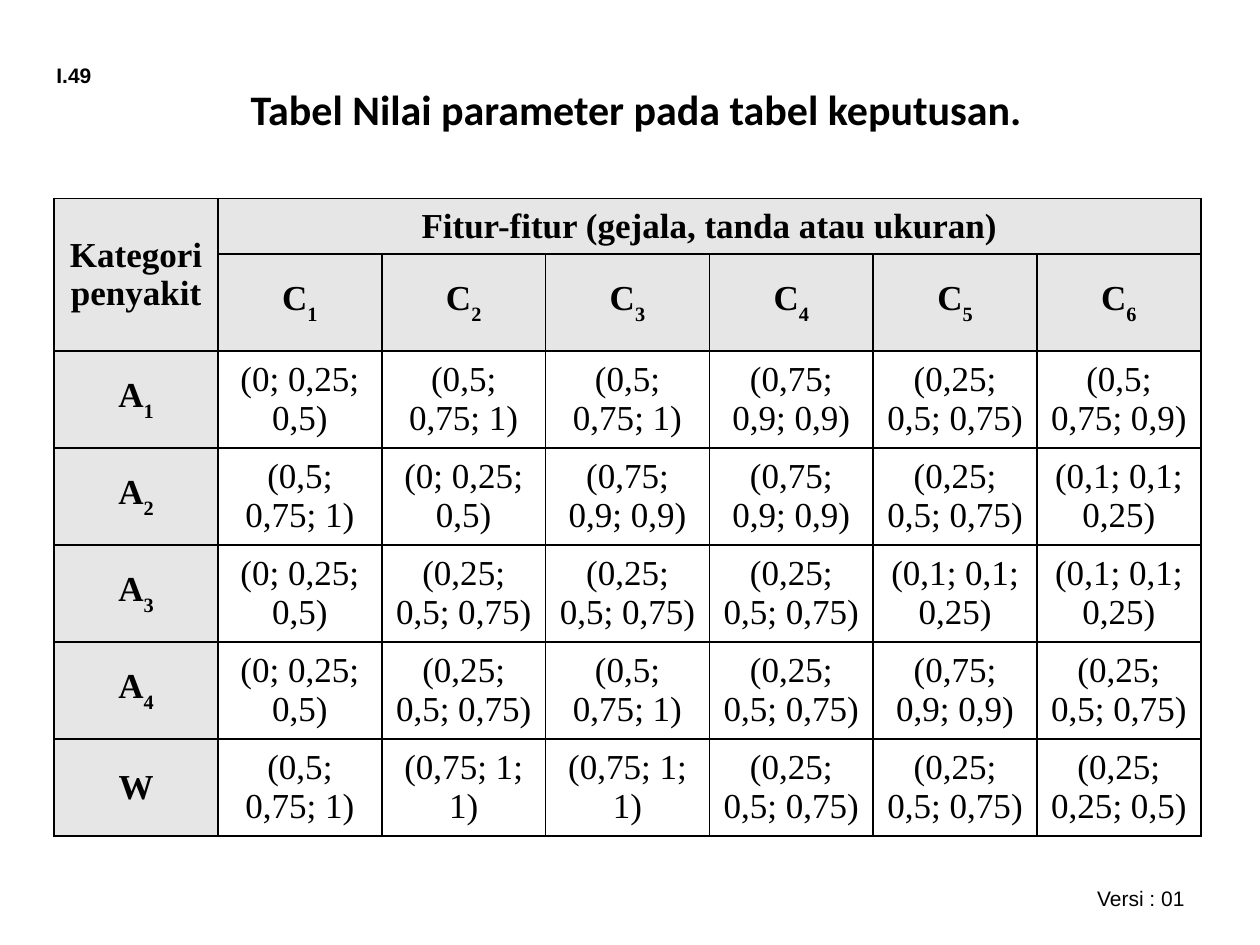
from dataclasses import dataclass

from lxml import etree
from pptx import Presentation, util as u
from pptx.dml.color import RGBColor
from pptx.enum import text
from pptx.oxml.ns import qn

WIDTH, HEIGHT = 10, 7.5
INK, SHADE = "000000", "E6E6E6"
COLUMN, HEADER_ROW, BODY_ROW = 1.3, 0.44, 0.77
SERIF = "Times New Roman"


@dataclass(frozen=True)
class Area:
    left: float
    top: float
    width: float
    height: float

    def lengths(self) -> tuple:
        return (u.Inches(self.left * WIDTH), u.Inches(self.top * HEIGHT),
                u.Inches(self.width * WIDTH), u.Inches(self.height * HEIGHT))


@dataclass(frozen=True)
class Category:
    letter: str
    index: str
    values: tuple[str, ...]


LOW, HIGH, SURE = "(0; 0,25; 0,5)", "(0,5; 0,75; 1)", "(0,75; 0,9; 0,9)"
MIDDLE, RARE = "(0,25; 0,5; 0,75)", "(0,1; 0,1; 0,25)"
CERTAIN = "(0,75; 1; 1)"
CATEGORIES = [
    Category("A", "1", (LOW, HIGH, HIGH, SURE, MIDDLE, "(0,5; 0,75; 0,9)")),
    Category("A", "2", (HIGH, LOW, SURE, SURE, MIDDLE, RARE)),
    Category("A", "3", (LOW, MIDDLE, MIDDLE, MIDDLE, RARE, RARE)),
    Category("A", "4", (LOW, MIDDLE, HIGH, MIDDLE, SURE, MIDDLE)),
    Category("W", "", (HIGH, CERTAIN, CERTAIN, MIDDLE, MIDDLE, "(0,25; 0,25; 0,5)")),
]
FEATURES = len(CATEGORIES[0].values)


def colour(value: str) -> RGBColor:
    return RGBColor.from_string(value)


def write(frame, wording: str, *, subscript: str = "", size: float = 20,
          font: str = SERIF, bold: bool = False,
          align=text.PP_ALIGN.CENTER) -> None:
    frame.word_wrap = True
    paragraph = frame.paragraphs[0]
    paragraph.alignment = align
    for part, baseline in ((wording, None), (subscript, "-30000")):
        if not part:
            continue
        run = paragraph.add_run()
        run.text = part
        run.font.size = u.Pt(size)
        run.font.name = font
        run.font.bold = bold
        run.font.color.rgb = colour(INK)
        if baseline:
            run.font._element.set("baseline", baseline)


def add_borders(cell) -> None:
    properties = cell._tc.get_or_add_tcPr()
    for position, side in enumerate(("lnL", "lnR", "lnT", "lnB")):
        line = etree.Element(qn(f"a:{side}"), w=str(u.Pt(1)))
        fill = etree.SubElement(line, qn("a:solidFill"))
        etree.SubElement(fill, qn("a:srgbClr"), val=INK)
        properties.insert(position, line)


def fill_cell(cell, wording: str, subscript: str = "", heading: bool = False) -> None:
    cell.vertical_anchor = text.MSO_ANCHOR.MIDDLE
    write(cell.text_frame, wording, subscript=subscript, bold=heading)


def add_label(slide, area: Area, wording: str, **style) -> None:
    write(slide.shapes.add_textbox(*area.lengths()).text_frame, wording,
          size=12, font="Arial", **style)


def add_title(slide, area: Area, wording: str) -> None:
    title = slide.shapes.title
    title.left, title.top, title.width, title.height = area.lengths()
    title.text_frame.vertical_anchor = text.MSO_ANCHOR.MIDDLE
    write(title.text_frame, wording, size=24, font="Calibri", bold=True)


def add_decision_table(slide, left: float, top: float) -> None:
    body_rows = len(CATEGORIES) + 1
    area = Area(left, top, COLUMN * (FEATURES + 1) / WIDTH,
                (HEADER_ROW + BODY_ROW * body_rows) / HEIGHT)
    table = slide.shapes.add_table(body_rows + 1, FEATURES + 1, *area.lengths()).table
    for column in table.columns:
        column.width = u.Inches(COLUMN)
    for number, row in enumerate(table.rows):
        row.height = u.Inches(BODY_ROW if number else HEADER_ROW)
        for position, cell in enumerate(row.cells):
            if number < 2 or position == 0:
                cell.fill.solid()
                cell.fill.fore_color.rgb = colour(SHADE)
            else:
                cell.fill.background()
            add_borders(cell)

    table.cell(0, 0).merge(table.cell(1, 0))
    table.cell(0, 1).merge(table.cell(0, FEATURES))
    fill_cell(table.cell(0, 0), "Kategori penyakit", heading=True)
    fill_cell(table.cell(0, 1), "Fitur-fitur (gejala, tanda atau ukuran)", heading=True)
    for feature in range(1, FEATURES + 1):
        fill_cell(table.cell(1, feature), "C", str(feature), heading=True)
    for number, category in enumerate(CATEGORIES, start=2):
        fill_cell(table.cell(number, 0), category.letter, category.index, heading=True)
        for feature, value in enumerate(category.values, start=1):
            fill_cell(table.cell(number, feature), value)


def main() -> None:
    deck = Presentation()
    deck.slide_width, deck.slide_height = u.Inches(WIDTH), u.Inches(HEIGHT)
    slide = deck.slides.add_slide(deck.slide_layouts.get_by_name("Title Only"))
    add_label(slide, Area(0.72, 0.93, 0.23, 0.04), "Versi : 01",
              align=text.PP_ALIGN.RIGHT)
    add_label(slide, Area(0.035, 0.06, 0.18, 0.04), "I.49", bold=True,
              align=text.PP_ALIGN.LEFT)
    add_title(slide, Area(0.14, 0.08, 0.73, 0.07),
              "Tabel Nilai parameter pada tabel keputusan.")
    add_decision_table(slide, 0.043, 0.21)
    deck.save("out.pptx")


if __name__ == "__main__":
    main()
